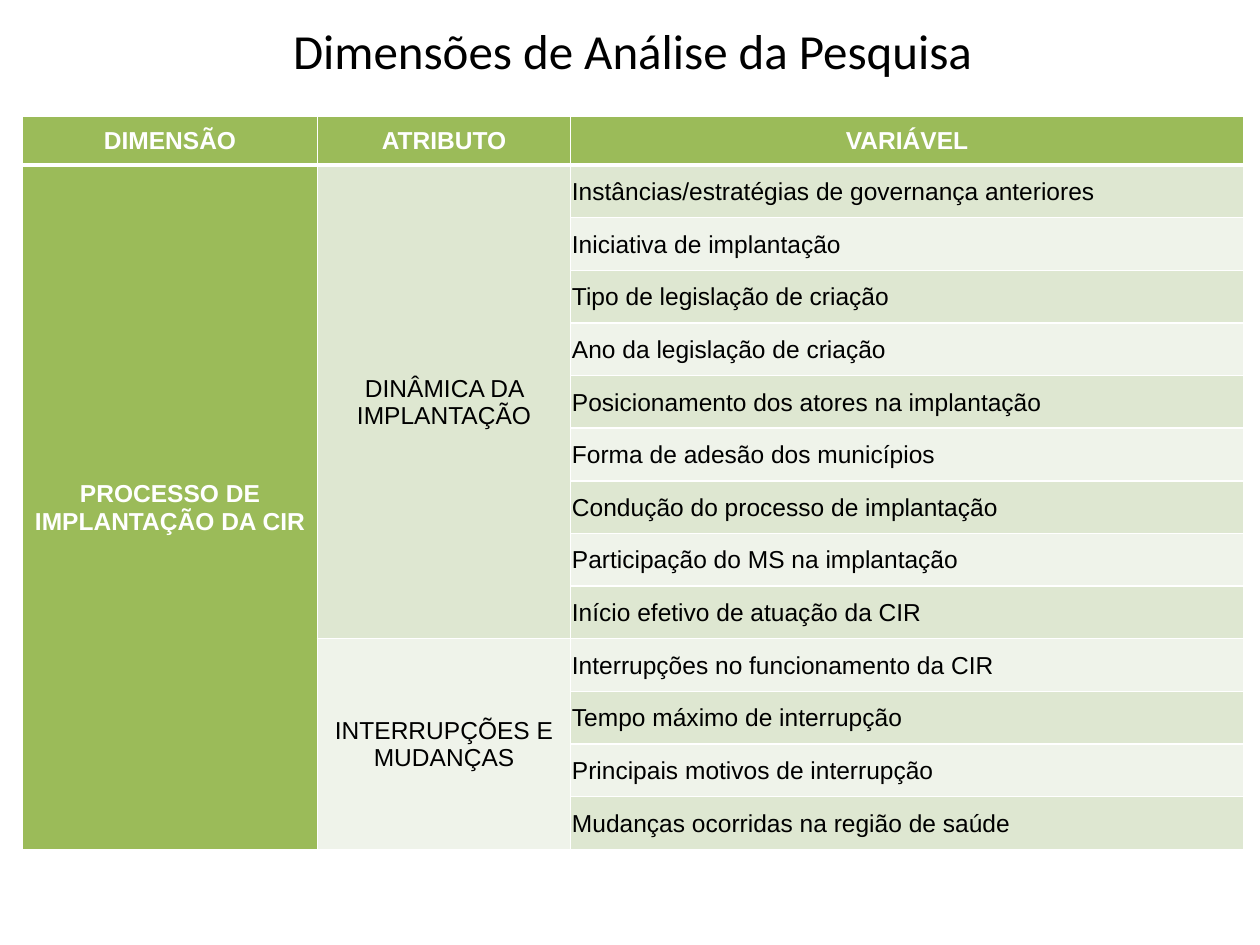
from dataclasses import dataclass

from lxml.etree import SubElement
from pptx import Presentation
from pptx.dml.color import RGBColor as Rgb
from pptx.enum.text import MSO_ANCHOR as Anchor, MSO_AUTO_SIZE as Fit, PP_ALIGN as Align
from pptx.oxml.ns import qn
from pptx.table import _Cell as Cell
from pptx.util import Inches, Pt


@dataclass(frozen=True)
class Theme:
    green: str = "9BBB59"
    bands: tuple[str, str] = ("DEE7D1", "EFF3EA")
    white: str = "FFFFFF"
    black: str = "000000"
    head: str = "Calibri"
    body: str = "Arial"
    big: int = 28
    small: int = 14
    thin: int = 1
    thick: int = 3


@dataclass(frozen=True)
class Group:
    name: str
    items: tuple[str, ...]


THEME = Theme()
TITLE = "Dimensões de Análise da Pesquisa"
HEADS = ("DIMENSÃO", "ATRIBUTO", "VARIÁVEL")
TOPIC = "PROCESSO DE IMPLANTAÇÃO DA CIR"
GROUPS = (
    Group("DINÂMICA DA IMPLANTAÇÃO", (
        "Instâncias/estratégias de governança anteriores",
        "Iniciativa de implantação",
        "Tipo de legislação de criação",
        "Ano da legislação de criação",
        "Posicionamento dos atores na implantação",
        "Forma de adesão dos municípios",
        "Condução do processo de implantação",
        "Participação do MS na implantação",
        "Início efetivo de atuação da CIR",
    )),
    Group("INTERRUPÇÕES E MUDANÇAS", (
        "Interrupções no funcionamento da CIR",
        "Tempo máximo de interrupção",
        "Principais motivos de interrupção",
        "Mudanças ocorridas na região de saúde",
    )),
)
COLS = (2.34, 2.01, 5.34)
HEAD_ROW, ROW = 0.39, 0.418


def style(par, font: str, size: int, color: str, bold: bool, align: Align) -> None:
    par.alignment = align
    for run in par.runs:
        run.font.name, run.font.size, run.font.bold = font, Pt(size), bold
        run.font.color.rgb = Rgb.from_string(color)


def edge(cell: Cell, side: str, width: int) -> None:
    line = SubElement(cell._tc.get_or_add_tcPr(), qn(f"a:ln{side}"), w=str(Pt(width)))
    fill = SubElement(line, qn("a:solidFill"))
    SubElement(fill, qn("a:srgbClr"), val=THEME.white)


def paint(cell: Cell, row: int, col: int) -> None:
    """Give a cell its borders, then its fill: green for heads, bands elsewhere."""
    for side in "LRTB":
        heavy = (row, side) in ((0, "B"), (1, "T"))
        edge(cell, side, THEME.thick if heavy else THEME.thin)
    color = THEME.green if row == 0 or col == 0 else THEME.bands[(row - 1) % 2]
    cell.fill.solid()
    cell.fill.fore_color.rgb = Rgb.from_string(color)
    cell.vertical_anchor = Anchor.MIDDLE
    cell.margin_left = cell.margin_right = cell.margin_top = Inches(0.01)
    cell.margin_bottom = 0


def write(cell: Cell, text: str, strong: bool = False, align: Align = Align.CENTER) -> None:
    cell.text = text
    color = THEME.white if strong else THEME.black
    style(cell.text_frame.paragraphs[0], THEME.body, THEME.small, color, strong, align)


def add_title(slide) -> None:
    box = slide.shapes.add_textbox(Inches(1.28), Inches(0.11), Inches(7.48), Inches(0.57))
    frame = box.text_frame
    frame.word_wrap = True
    frame.auto_size = Fit.SHAPE_TO_FIT_TEXT
    frame.text = TITLE
    style(frame.paragraphs[0], THEME.head, THEME.big, THEME.black, False, Align.CENTER)


def add_grid(slide) -> None:
    count = sum(len(group.items) for group in GROUPS)
    high = HEAD_ROW + count * ROW
    table = slide.shapes.add_table(
        count + 1, len(COLS), Inches(0.18), Inches(0.92), Inches(sum(COLS)), Inches(high)
    ).table
    for col, width in zip(table.columns, COLS):
        col.width = Inches(width)
    for num, row in enumerate(table.rows):
        row.height = Inches(ROW if num else HEAD_ROW)
        for col, cell in enumerate(row.cells):
            paint(cell, num, col)

    for col, text in enumerate(HEADS):
        write(table.cell(0, col), text, strong=True)
    table.cell(1, 0).merge(table.cell(count, 0))
    write(table.cell(1, 0), TOPIC, strong=True)
    top = 1
    for group in GROUPS:
        end = top + len(group.items)
        table.cell(top, 1).merge(table.cell(end - 1, 1))
        write(table.cell(top, 1), group.name)
        for row, text in enumerate(group.items, top):
            write(table.cell(row, 2), text, align=Align.LEFT)
        top = end


def main() -> None:
    deck = Presentation()
    deck.slide_width, deck.slide_height = Inches(10), Inches(7.5)
    slide = deck.slides.add_slide(deck.slide_layouts[6])
    add_title(slide)
    add_grid(slide)
    deck.save("out.pptx")


if __name__ == "__main__":
    main()
